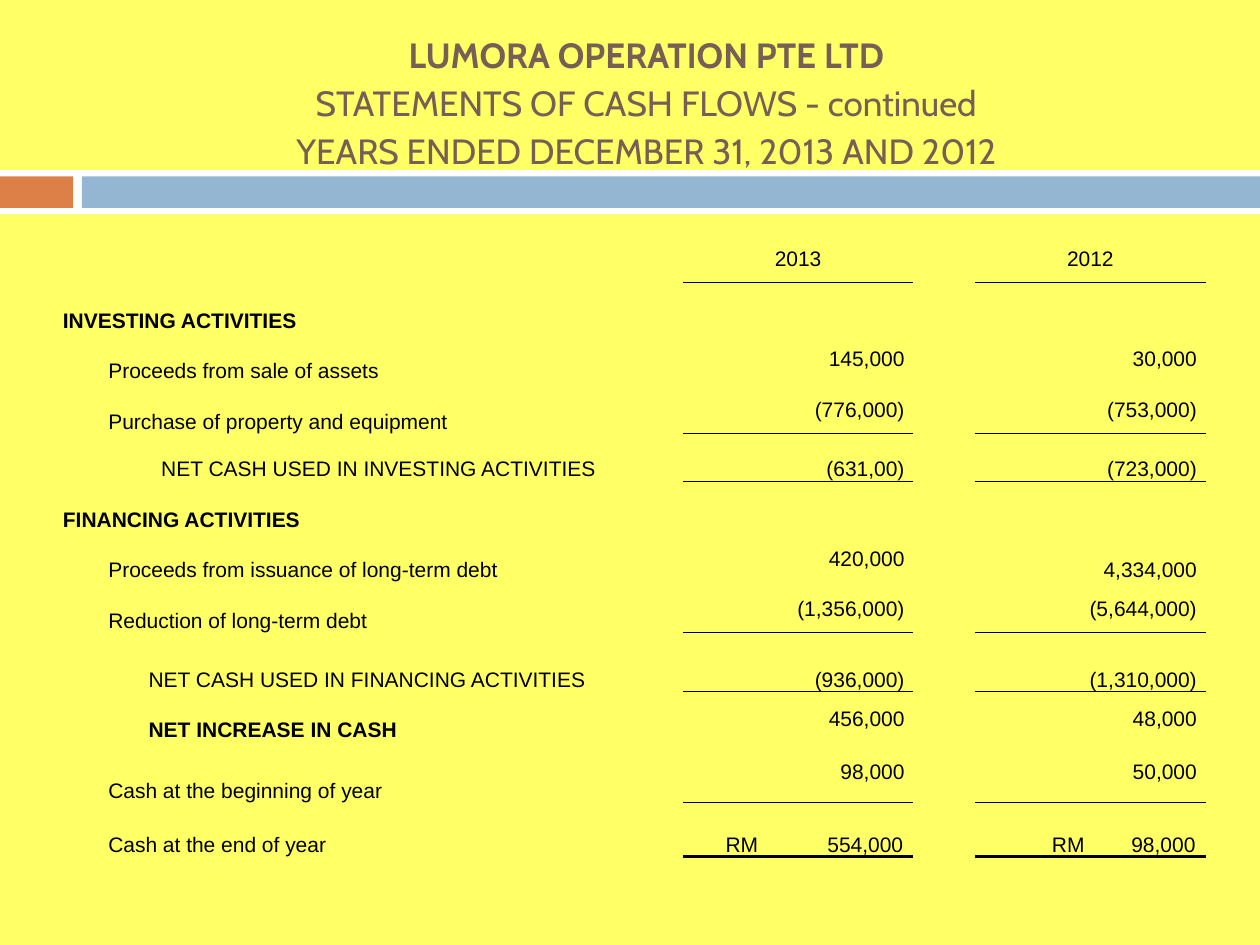
"""Build a cash flow statement slide with a ruled table of two years."""
from lxml import etree
from pptx import Presentation
from pptx import util as u
from pptx.dml.color import RGBColor
from pptx.enum import shapes, text
from pptx.oxml.ns import qn

BLACK = "000000"
NO_GRID_STYLE = "{2D5ABB26-0587-4C30-8999-92F81FD0307C}"
MIDDLE, BOTTOM = text.MSO_ANCHOR.MIDDLE, text.MSO_ANCHOR.BOTTOM


def paint(color_format, color):
    color_format.rgb = RGBColor.from_string(color)


def rule(cell, side, points):
    """Draw a black line on one side of a cell, or clear it at zero points."""
    line = etree.Element(qn(f"a:{side}"), w=str(u.Pt(points)))
    if points:
        fill = etree.SubElement(line, qn("a:solidFill"))
        etree.SubElement(fill, qn("a:srgbClr"), val=BLACK)
    else:
        etree.SubElement(line, qn("a:noFill"))
    cell._tc.get_or_add_tcPr().insert(0, line)


deck = Presentation()
deck.slide_width, deck.slide_height = u.Inches(10), u.Inches(7.5)
page = deck.slides.add_slide(deck.slide_layouts[5])
page.background.fill.solid()
paint(page.background.fill.fore_color, "FFFF66")

bands = [
    (0, 1.35, 10, 0.35, "FFFFFF"),
    (0, 1.4, 0.58, 0.25, "DD8047"),
    (0.65, 1.4, 9.35, 0.25, "94B6D2"),
]
for left, top, width, height, color in bands:
    band = page.shapes.add_shape(
        shapes.MSO_SHAPE.RECTANGLE,
        u.Inches(left), u.Inches(top), u.Inches(width), u.Inches(height))
    band.shadow.inherit = False
    band.fill.solid()
    paint(band.fill.fore_color, color)
    band.line.fill.background()

title = page.shapes.title
page.shapes.element.append(title.element)
title.left, title.top = u.Inches(0.67), u.Inches(0.25)
title.width, title.height = u.Inches(8.92), u.Inches(1.08)
frame = title.text_frame
frame.word_wrap = True
frame.auto_size = text.MSO_AUTO_SIZE.NONE
frame.vertical_anchor = MIDDLE
para = frame.paragraphs[0]
para.alignment = text.PP_ALIGN.CENTER
para.line_spacing = 1.15
para.font.name, para.font.size = "Cabin", u.Pt(20)
lines = [
    "LUMORA OPERATION PTE LTD",
    "STATEMENTS OF CASH FLOWS - continued",
    "YEARS ENDED DECEMBER 31, 2013 AND 2012",
]
for index, line in enumerate(lines):
    if index:
        para.add_line_break()
    span = para.add_run()
    span.text = line
    span.font.name, span.font.size = "Cabin", u.Pt(20)
    span.font.bold = index == 0
    paint(span.font.color, "775F55")

# label, label indent, bold, 2013, 2012, anchors of the amounts, row height, rule below
rows = [
    ("", 0, False, "2013", "2012", MIDDLE, MIDDLE, 0.4, 1),
    ("INVESTING ACTIVITIES", 0, True, "", "", MIDDLE, MIDDLE, 0.4, 0),
    ("Proceeds from sale of assets", 0, False, "145,000", "30,000", MIDDLE, MIDDLE, 0.4, 0),
    ("Purchase of property and equipment", 0, False, "(776,000)", "(753,000)",
     MIDDLE, MIDDLE, 0.4, 1),
    ("NET CASH USED IN INVESTING ACTIVITIES", 0.42, False, "(631,00)", "(723,000)",
     BOTTOM, BOTTOM, 0.38, 1),
    ("FINANCING ACTIVITIES", 0, True, "", "", MIDDLE, MIDDLE, 0.4, 0),
    ("Proceeds from issuance of long-term debt", 0, False, "420,000", "4,334,000",
     MIDDLE, BOTTOM, 0.4, 0),
    ("Reduction of long-term debt", 0, False, "(1,356,000)", "(5,644,000)",
     MIDDLE, MIDDLE, 0.4, 1),
    ("NET CASH USED IN FINANCING ACTIVITIES", 0.32, False, "(936,000)", "(1,310,000)",
     BOTTOM, BOTTOM, 0.47, 1),
    ("NET INCREASE IN CASH", 0.32, True, "456,000", "48,000", MIDDLE, MIDDLE, 0.4, 0),
    ("Cash at the beginning of year", 0, False, "98,000", "50,000", MIDDLE, MIDDLE, 0.48, 1),
    ("Cash at the end of year", 0, False, "\tRM\t554,000", "\tRM\t98,000",
     BOTTOM, BOTTOM, 0.43, 2.25),
]
widths = [0.36, 4.14, 0.49, 1.83, 0.49, 1.83]
currency_tabs = {3: 0.27, 5: 0.54}

graphic = page.shapes.add_table(
    len(rows), len(widths), u.Inches(0.43), u.Inches(1.84), u.Inches(9.13), u.Inches(4.98))
graphic.element.xpath(".//a:tableStyleId")[0].text = NO_GRID_STYLE
table = graphic.table
table.first_row = table.horz_banding = False
for column, width in zip(table.columns, widths):
    column.width = u.Inches(width)

rule_above = 0
for r, (label, indent, bold, now, before, now_anchor, before_anchor, height, below) in enumerate(rows):
    table.rows[r].height = u.Inches(height)
    heading = r == 0 or not now
    if heading:
        table.cell(r, 0).merge(table.cell(r, 1))
    entries = {0 if heading else 1: (label, BOTTOM), 3: (now, now_anchor), 5: (before, before_anchor)}
    for c in range(len(widths)):
        cell = table.cell(r, c)
        words, anchor = entries.get(c, ("", MIDDLE))
        cell.fill.background()
        cell.margin_left = cell.margin_right = u.Inches(0.07)
        cell.margin_top = cell.margin_bottom = 0
        cell.vertical_anchor = anchor
        para = cell.text_frame.paragraphs[0]
        para.font.size = u.Pt(12)
        if words:
            span = para.add_run()
            span.text = words
            span.font.name, span.font.size = "Arial", u.Pt(12)
            span.font.bold = bold and c < 2
            paint(span.font.color, BLACK)
            if label != "Cash at the beginning of year":
                para.line_spacing = 1.15
                para.space_before = u.Pt(12)
        if c in currency_tabs:
            para.alignment = text.PP_ALIGN.CENTER if r == 0 else text.PP_ALIGN.RIGHT
            if "\t" in words:
                para.alignment = text.PP_ALIGN.LEFT
                stops = etree.Element(qn("a:tabLst"))
                for position, kind in ((currency_tabs[c], "l"), (1.68, "r")):
                    etree.SubElement(stops, qn("a:tab"), pos=str(u.Inches(position)), algn=kind)
                para._p.get_or_add_pPr().append(stops)
            rule(cell, "lnB", below)
            rule(cell, "lnT", rule_above)
        elif indent and words:
            para._p.get_or_add_pPr().set("marL", str(u.Inches(indent)))
    rule_above = below

deck.save("out.pptx")
